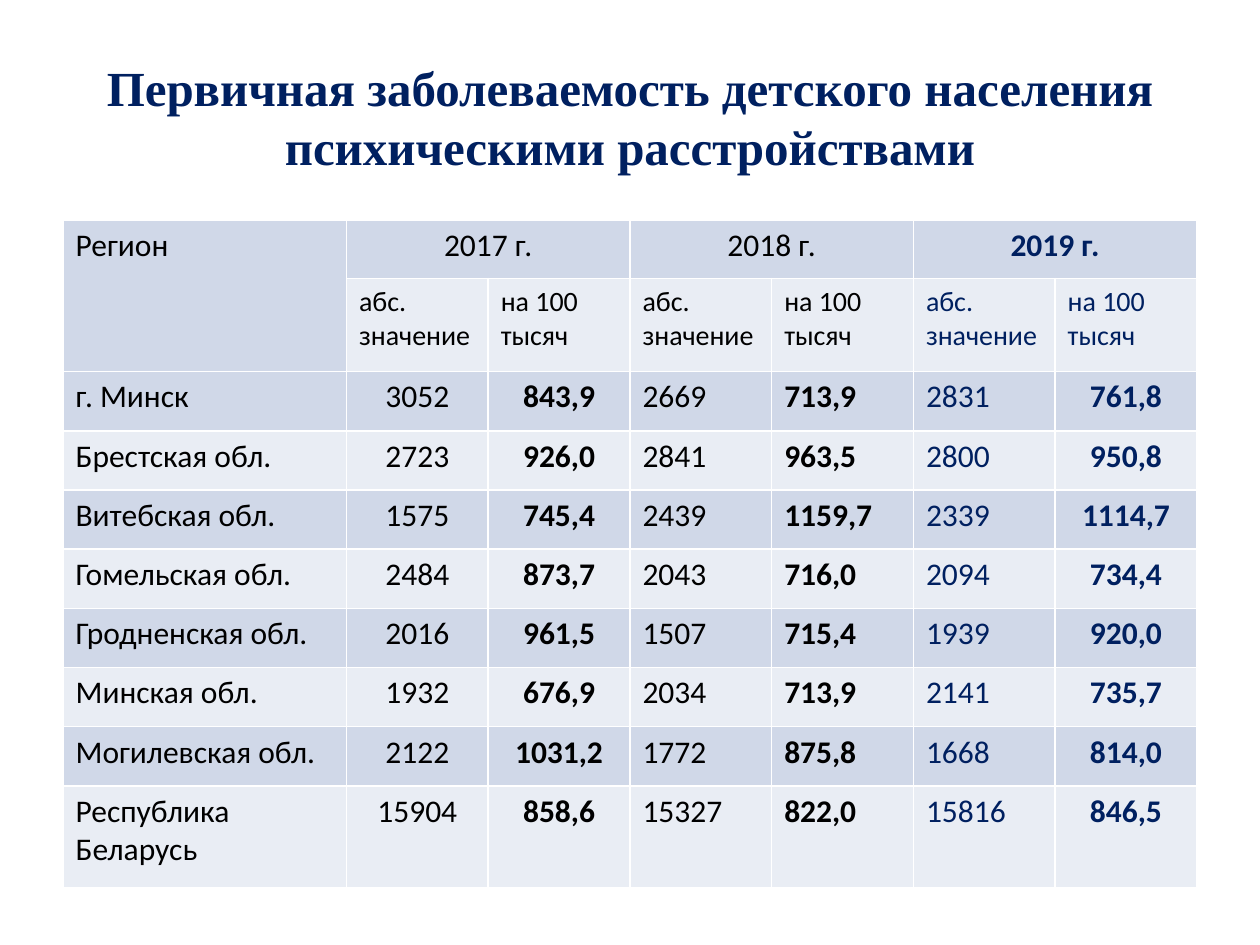
from lxml.etree import SubElement
from pptx import Presentation
from pptx.dml.color import RGBColor
from pptx.enum.text import MSO_ANCHOR, PP_ALIGN
from pptx.oxml.ns import qn
from pptx.util import Inches, Pt

TITLE = "Первичная заболеваемость детского населения психическими расстройствами"
CORNER = "Регион"
YEARS = ["2017 г.", "2018 г.", "2019 г."]
HEADS = ["абс.\nзначение", "на 100 тысяч", "абс. значение",
         "на 100 тысяч", "абс.\nзначение", "на 100 тысяч"]
ROWS = [
    ("г. Минск", "3052", "843,9", "2669", "713,9", "2831", "761,8"),
    ("Брестская обл.", "2723", "926,0", "2841", "963,5", "2800", "950,8"),
    ("Витебская обл.", "1575", "745,4", "2439", "1159,7", "2339", "1114,7"),
    ("Гомельская обл.", "2484", "873,7", "2043", "716,0", "2094", "734,4"),
    ("Гродненская обл.", "2016", "961,5", "1507", "715,4", "1939", "920,0"),
    ("Минская обл.", "1932", "676,9", "2034", "713,9", "2141", "735,7"),
    ("Могилевская обл.", "2122", "1031,2", "1772", "875,8", "1668", "814,0"),
    ("Республика Беларусь", "15904", "858,6", "15327", "822,0", "15816", "846,5"),
]
THEME = {
    "navy": "002060", "black": "000000", "line": "FFFFFF",
    "bands": ("D0D8E8", "E9EDF4"),
    "title": 28, "body": 18, "small": 16,
    "serif": "Times New Roman", "sans": "Calibri",
}
LEFT, TOP, WIDTH = 0.5, 1.75, 9
FIRST = 2.25
HEIGHTS = [0.46, 0.74] + [0.47] * (len(ROWS) - 1) + [0.81]
CENTRED = (1, 2, 6)


def write(frame, text, size=THEME["body"], font=THEME["sans"],
          color=THEME["black"], bold=False, align=PP_ALIGN.LEFT):
    for i, line in enumerate(text.split("\n")):
        para = frame.paragraphs[0] if i == 0 else frame.add_paragraph()
        para.alignment = align
        run = para.add_run()
        run.text = line
        run.font.size = Pt(size)
        run.font.name = font
        run.font.bold = bold
        run.font.color.rgb = RGBColor.from_string(color)


def paint(cell, fill):
    props = cell._tc.get_or_add_tcPr()
    for side in ("a:lnL", "a:lnR", "a:lnT", "a:lnB"):
        edge = SubElement(props, qn(side), w=str(Pt(1)))
        solid = SubElement(edge, qn("a:solidFill"))
        SubElement(solid, qn("a:srgbClr"), val=THEME["line"])
    cell.fill.solid()
    cell.fill.fore_color.rgb = RGBColor.from_string(fill)


def tint(col):
    return THEME["navy"] if col > 4 else THEME["black"]


def add_title(slide):
    title = slide.shapes.title
    title.left, title.top = Inches(LEFT), Inches(0.3)
    title.width, title.height = Inches(WIDTH), Inches(1.25)
    title.text_frame.word_wrap = True
    title.text_frame.vertical_anchor = MSO_ANCHOR.MIDDLE
    write(title.text_frame, TITLE, size=THEME["title"], font=THEME["serif"],
          color=THEME["navy"], bold=True, align=PP_ALIGN.CENTER)


def add_grid(slide):
    count = len(HEADS) + 1
    table = slide.shapes.add_table(
        len(HEIGHTS), count, Inches(LEFT), Inches(TOP),
        Inches(WIDTH), Inches(sum(HEIGHTS))).table
    table.first_row = False
    table.horz_banding = False
    for col in range(count):
        wide = FIRST if col == 0 else (WIDTH - FIRST) / len(HEADS)
        table.columns[col].width = Inches(wide)
    for row, high in enumerate(HEIGHTS):
        table.rows[row].height = Inches(high)
        for col in range(count):
            paint(table.cell(row, col), THEME["bands"][row % 2])

    table.cell(0, 0).merge(table.cell(1, 0))
    write(table.cell(0, 0).text_frame, CORNER)
    for i, year in enumerate(YEARS):
        col = 1 + 2 * i
        table.cell(0, col).merge(table.cell(0, col + 1))
        write(table.cell(0, col).text_frame, year, color=tint(col),
              bold=col > 4, align=PP_ALIGN.CENTER)
    for col, head in enumerate(HEADS, 1):
        write(table.cell(1, col).text_frame, head, size=THEME["small"],
              color=tint(col))
    for row, items in enumerate(ROWS, 2):
        for col, item in enumerate(items):
            write(table.cell(row, col).text_frame, item, color=tint(col),
                  bold=col > 0 and col % 2 == 0,
                  align=PP_ALIGN.CENTER if col in CENTRED else PP_ALIGN.LEFT)


def main():
    deck = Presentation()
    deck.slide_width, deck.slide_height = Inches(10), Inches(7.5)
    slide = deck.slides.add_slide(deck.slide_layouts[5])
    add_title(slide)
    add_grid(slide)
    deck.save("out.pptx")


if __name__ == "__main__":
    main()
